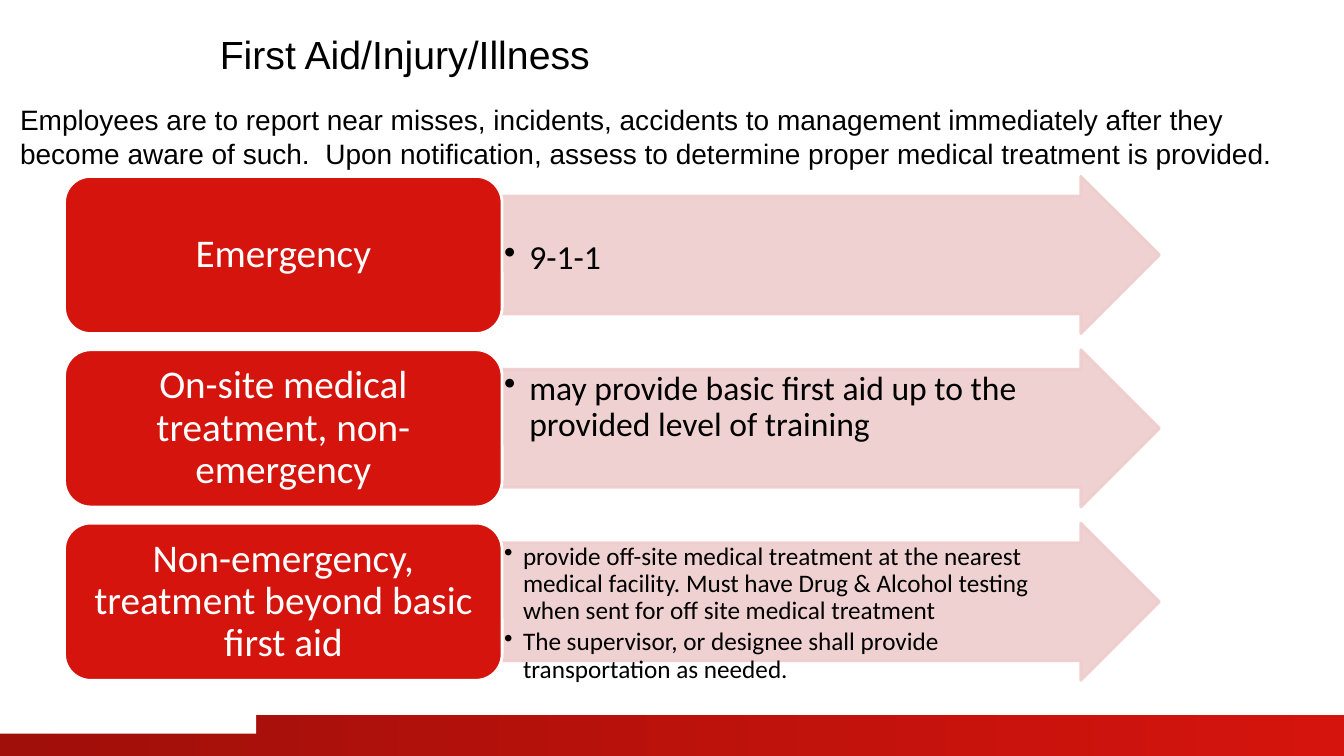
from pptx import Presentation
from pptx.dml.color import RGBColor
from pptx.enum.shapes import MSO_SHAPE
from pptx.enum.text import MSO_ANCHOR, MSO_AUTO_SIZE, PP_ALIGN
from pptx.oxml.ns import qn
from pptx.util import Inches, Pt
from lxml.etree import SubElement

TITLE = "First Aid/Injury/Illness"
INTRO = ("Employees are to report near misses, incidents, accidents to management "
         "immediately after they become aware of such.  Upon notification, assess to "
         "determine proper medical treatment is provided.")
STEPS = [
    ("Emergency", 24, 0.44, ["9-1-1"]),
    ("On-site medical treatment, non-emergency", 24, 0.02,
     ["may provide basic first aid up to the provided level of training"]),
    ("Non-emergency, treatment beyond basic first aid", 18, 0.01,
     ["provide off-site medical treatment at the nearest medical facility. Must have "
      "Drug & Alcohol testing when sent for off site medical treatment",
      "The supervisor, or designee shall provide transportation as needed."]),
]
RED, DARK, PINK, WHITE, BLACK = "D5140D", "A00F0A", "EFCCCC", "FFFFFF", "000000"
WIDE, HIGH = 13.33, 7.5
LEFT, TOP, CARD, ARROW, ROW, PITCH = 0.64, 1.75, 4.34, 6.52, 1.56, 1.72


def color(code):
    return RGBColor.from_string(code)


def block(kind, box, fill, line=None):
    shape = slide.shapes.add_shape(kind, *map(Inches, box))
    shape.shadow.inherit = False
    shape.fill.solid()
    shape.fill.fore_color.rgb = color(fill)
    if line:
        shape.line.color.rgb = color(line)
        shape.line.width = Pt(2)
    else:
        shape.line.fill.background()
    return shape


def fade(shape):
    for node in list(shape.element.spPr.iter(qn("a:srgbClr"))):
        SubElement(node, qn("a:alpha")).set("val", "90000")


def setup(frame, anchor, pads):
    frame.word_wrap = True
    frame.auto_size = MSO_AUTO_SIZE.NONE
    frame.vertical_anchor = anchor
    (frame.margin_left, frame.margin_top,
     frame.margin_right, frame.margin_bottom) = map(Inches, pads)


def write(para, text, size, face, ink, align=PP_ALIGN.LEFT):
    para.alignment = align
    run = para.add_run()
    run.text = text
    run.font.size, run.font.name = Pt(size), face
    run.font.color.rgb = color(ink)


def bullet(para, size):
    props = para._p.get_or_add_pPr()
    dent = Inches(size / 96)
    props.set("marL", str(dent))
    props.set("indent", str(-dent))
    SubElement(props, qn("a:buChar")).set("char", "•")
    para.line_spacing = 0.9
    para.space_after = Pt(size * 0.15)


deck = Presentation()
deck.slide_width, deck.slide_height = Inches(WIDE), Inches(HIGH)
slide = deck.slides.add_slide(deck.slide_layouts[5])

band = block(MSO_SHAPE.RECTANGLE, (0, 7.09, WIDE, 0.41), RED)
band.fill.gradient()
band.fill.gradient_angle = 0
for stop, code, place in zip(band.fill.gradient_stops, (DARK, RED), (0, 1)):
    stop.color.rgb = color(code)
    stop.position = place
block(MSO_SHAPE.RECTANGLE, (0, 6.78, 2.54, 0.5), WHITE)

for row, (name, size, pad, notes) in enumerate(STEPS):
    y = TOP + row * PITCH
    arrow = block(MSO_SHAPE.RIGHT_ARROW, (LEFT + CARD, y, ARROW, ROW), PINK, PINK)
    arrow.adjustments[0], arrow.adjustments[1] = 0.75, 0.5
    fade(arrow)
    setup(arrow.text_frame, MSO_ANCHOR.TOP, (0.02, pad, 0.41, 0.01))
    for i, note in enumerate(notes):
        para = arrow.text_frame.add_paragraph() if i else arrow.text_frame.paragraphs[0]
        bullet(para, size)
        write(para, note, size, "Calibri", BLACK)
    card = block(MSO_SHAPE.ROUNDED_RECTANGLE, (LEFT, y, CARD, ROW), RED, WHITE)
    setup(card.text_frame, MSO_ANCHOR.MIDDLE, (0.12, 0.06, 0.12, 0.06))
    para = card.text_frame.paragraphs[0]
    para.line_spacing = 0.9
    write(para, name, 28, "Calibri", WHITE, PP_ALIGN.CENTER)

title = slide.shapes.title
title.left, title.top, title.width, title.height = map(Inches, (2.08, 0.25, 5.75, 0.57))
intro = slide.shapes.add_textbox(*map(Inches, (0.1, 0.97, 13.12, 0.77)))
for shape, text, size in ((title, TITLE, 28), (intro, INTRO, 20)):
    setup(shape.text_frame, MSO_ANCHOR.TOP, (0.1, 0.05, 0.1, 0.05))
    write(shape.text_frame.paragraphs[0], text, size, "Arial", BLACK)

deck.save("out.pptx")
